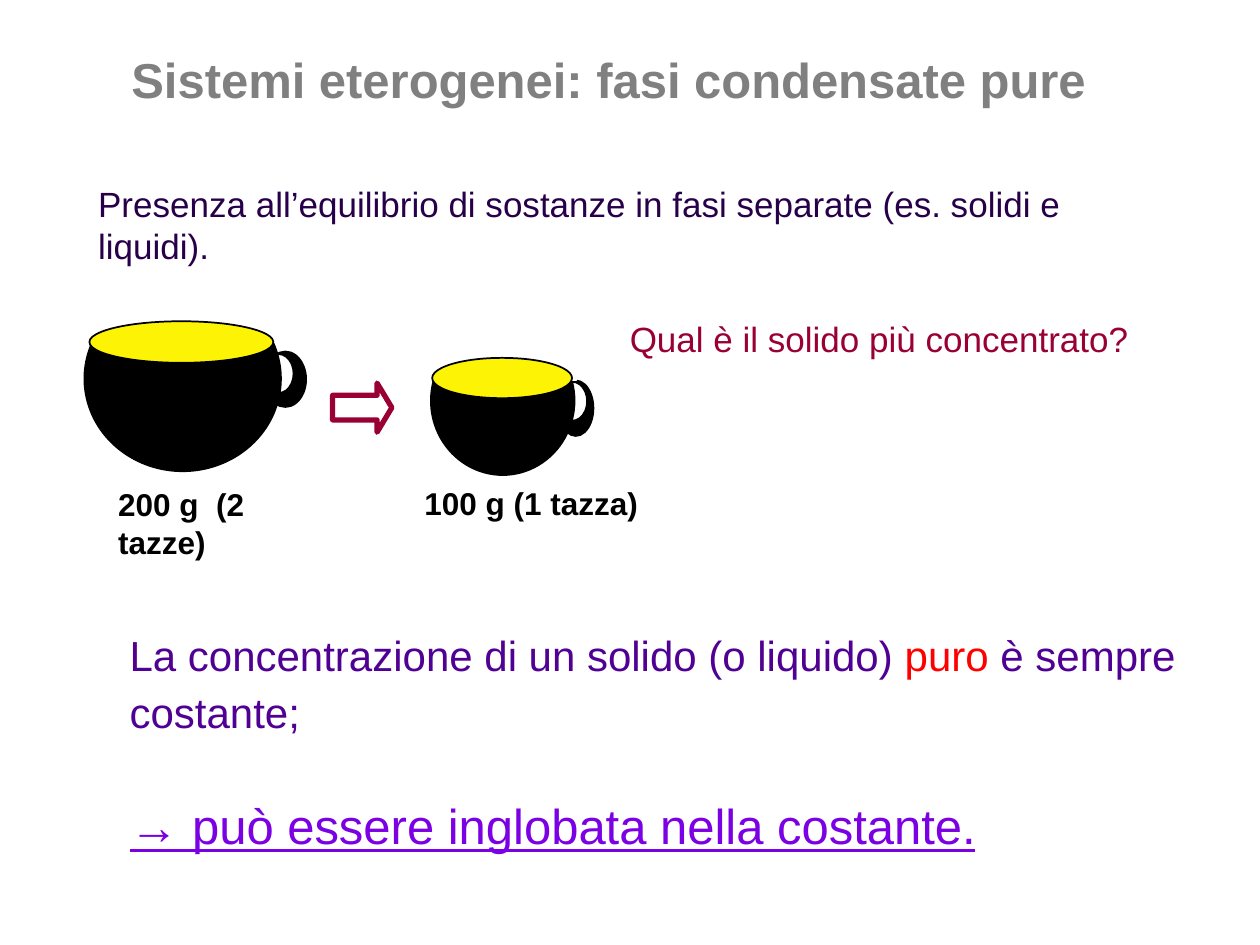
from pptx import Presentation
from pptx.dml.color import RGBColor
from pptx.enum import shapes, text
from pptx.util import Inches, Pt

GREY = RGBColor(0x80, 0x80, 0x80)
DARK = RGBColor(0x28, 0x00, 0x49)
INDIGO = RGBColor(0x50, 0x00, 0x93)
VIOLET = RGBColor(0x7B, 0x00, 0xE4)
WINE = RGBColor(0x99, 0x00, 0x33)
RED = RGBColor(0xFF, 0x00, 0x00)
BLACK = RGBColor(0x00, 0x00, 0x00)
WHITE = RGBColor(0xFF, 0xFF, 0xFF)
YELLOW = RGBColor(0xFC, 0xF3, 0x05)

OVAL = shapes.MSO_SHAPE.OVAL
RECT = shapes.MSO_SHAPE.RECTANGLE
ARROW = shapes.MSO_SHAPE.RIGHT_ARROW

# Cup parts from back to front: preset, fill, line
PARTS = [
    (OVAL, BLACK, BLACK),   # handle
    (OVAL, WHITE, BLACK),   # hole in the handle
    (OVAL, BLACK, BLACK),   # bowl
    (RECT, WHITE, WHITE),   # mask over the top of the bowl
    (OVAL, YELLOW, BLACK),  # content
]


def write(par, words, size=18, color=BLACK, bold=False, line=False):
    """Add one formatted run to a paragraph."""
    run = par.add_run()
    run.text = words
    font = run.font
    font.name, font.size, font.bold = "Arial", Pt(size), bold
    font.underline = line
    font.color.rgb = color


def add_box(slide, at, wrap=True):
    """Add an empty text box and return its frame."""
    frame = slide.shapes.add_textbox(*map(Inches, at)).text_frame
    frame.word_wrap = wrap
    return frame


def add_part(slide, kind, at, fill, line, width=1):
    part = slide.shapes.add_shape(kind, *map(Inches, at))
    part.shadow.inherit = False
    part.fill.solid()
    part.fill.fore_color.rgb = fill
    part.line.color.rgb = line
    part.line.width = Pt(width)
    return part


def add_cup(slide, spots):
    for (kind, fill, line), at in zip(PARTS, spots):
        add_part(slide, kind, at, fill, line)


def add_title(slide, words):
    title = slide.shapes.title
    title.left, title.top = Inches(0.58), Inches(0.26)
    title.width, title.height = Inches(8.5), Inches(0.73)
    frame = title.text_frame
    frame.vertical_anchor = text.MSO_ANCHOR.MIDDLE
    par = frame.paragraphs[0]
    par.alignment = text.PP_ALIGN.CENTER
    write(par, words, size=28, color=GREY, bold=True)


def main():
    deck = Presentation()
    deck.slide_width, deck.slide_height = Inches(10), Inches(7.5)
    slide = deck.slides.add_slide(deck.slide_layouts[5])
    add_title(slide, "Sistemi eterogenei: fasi condensate pure")

    # Introduction and question
    intro = add_box(slide, (0.68, 1.4, 8.58, 0.78))
    write(intro.paragraphs[0],
          "Presenza all’equilibrio di sostanze in fasi separate "
          "(es. solidi e liquidi).", size=20, color=DARK)
    query = add_box(slide, (4.9, 2.47, 4.36, 0.43))
    write(query.paragraphs[0], "Qual è il solido più concentrato?",
          size=20, color=WINE)

    # Conclusion
    end = add_box(slide, (0.93, 4.89, 8.58, 2.52))
    par = end.paragraphs[0]
    par.line_spacing = Pt(32.6)
    for words, color in [("La concentrazione di un solido (o liquido) ", INDIGO),
                         ("puro", RED), (" è sempre costante;", INDIGO)]:
        write(par, words, size=24, color=color)
    par = end.add_paragraph()
    par.space_before = Pt(34)
    write(par, "→ può essere inglobata nella costante.",
          size=28, color=VIOLET, line=True)

    # Small cup
    add_cup(slide, [(4.43, 3.02, 0.28, 0.44), (4.42, 3.03, 0.24, 0.31),
                    (3.42, 2.59, 1.14, 1.18), (3.39, 2.49, 1.18, 0.53),
                    (3.43, 2.84, 1.11, 0.32)])

    # Large cup
    add_cup(slide, [(2.1, 2.79, 0.33, 0.44), (2.09, 2.81, 0.24, 0.31),
                    (0.67, 2.27, 1.56, 1.47), (0.7, 2.18, 1.49, 0.54),
                    (0.71, 2.55, 1.46, 0.33)])

    # Cup labels
    for left, top, words in [(3.27, 3.79, "100 g (1 tazza)"),
                             (0.84, 3.8, "200 g  (2 tazze)")]:
        label = add_box(slide, (left, top, 1.96, 0.4), wrap=False)
        write(label.paragraphs[0], words, bold=True)

    # Arrow from the large cup to the small one
    arrow = add_part(slide, ARROW, (2.64, 3.04, 0.47, 0.39), WHITE, WINE, 3)
    arrow.adjustments[0], arrow.adjustments[1] = 0.5, 0.3

    deck.save("out.pptx")


if __name__ == "__main__":
    main()
